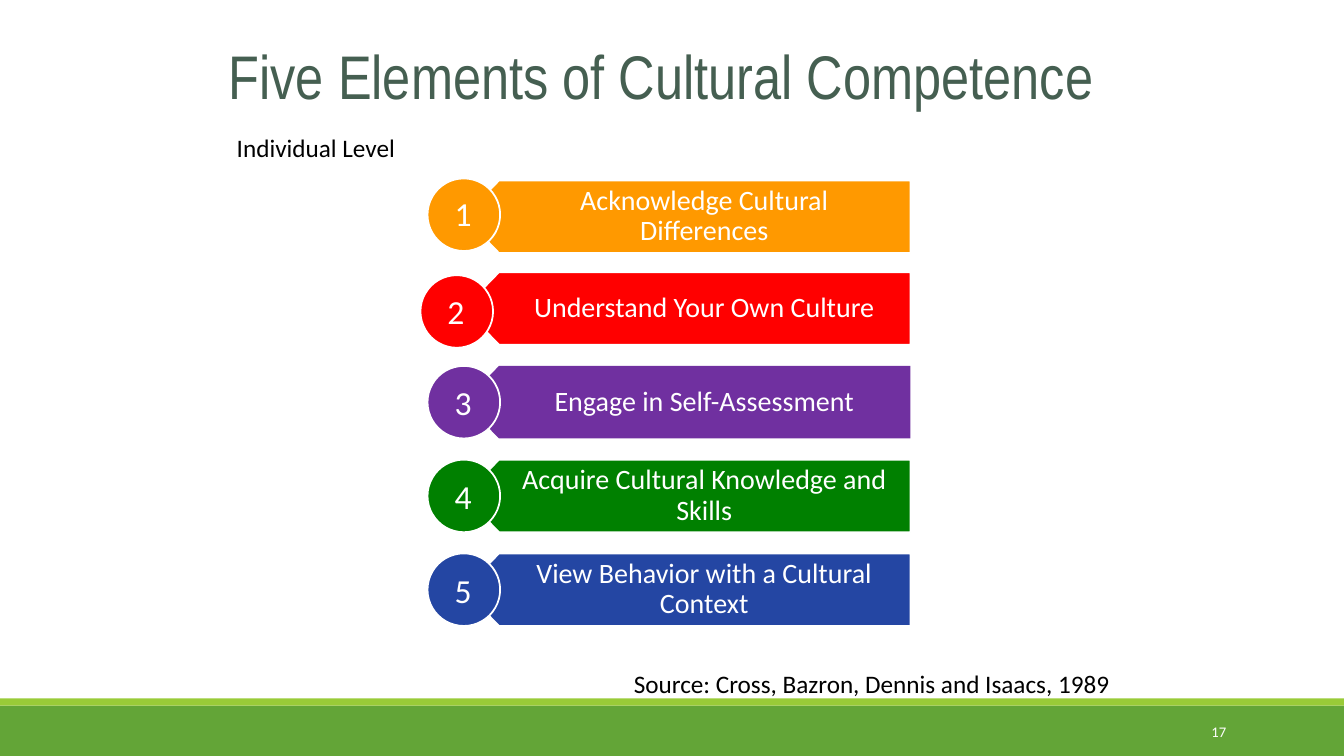
import pptx
import pptx.util
import pptx.dml.color
import pptx.enum.shapes
import pptx.enum.text

Inches = pptx.util.Inches
Pt = pptx.util.Pt
ALIGN = pptx.enum.text.PP_ALIGN
ANCHOR = pptx.enum.text.MSO_ANCHOR
KIND = pptx.enum.shapes.MSO_SHAPE

WHITE, BLACK = "FFFFFF", "000000"
TOP, PITCH, SIZE = 1.77, 0.93, 0.72
TIP, NECK, END = 4.6, 4.95, 9.03

# label, colour, bar drop, disc shift, disc drop, number drop, outlined
STEPS = [
    ("Acknowledge Cultural Differences", "FF9900", 0.02, 0, 0, 0.09, True),
    ("Understand Your Own Culture", "FF0000", 0, -0.07, 0.03, 0.11, True),
    ("Engage in Self-Assessment", "7030A0", 0, 0, 0, 0.11, False),
    ("Acquire Cultural Knowledge and Skills", "008000", 0, 0, 0, 0.11, True),
    ("View Behavior with a Cultural Context", "2446A3", 0, 0, 0, 0.11, True),
]


def color(code):
    """Turn a hex string into a colour."""
    return pptx.dml.color.RGBColor.from_string(code)


def paint(shape, fill, line=None):
    """Give a shape a flat fill and an optional outline."""
    shape.shadow.inherit = False
    shape.fill.solid()
    shape.fill.fore_color.rgb = color(fill)
    if line:
        shape.line.color.rgb = color(line)
        shape.line.width = Pt(1.25)
    else:
        shape.line.fill.background()


def write(shape, text, size, code, align=ALIGN.LEFT, anchor=ANCHOR.TOP,
          font="Calibri"):
    """Put one formatted paragraph into a shape."""
    frame = shape.text_frame
    frame.word_wrap = True
    frame.vertical_anchor = anchor
    frame.text = text
    para = frame.paragraphs[0]
    para.alignment = align
    face = para.runs[0].font
    face.name = font
    face.size = Pt(size)
    face.color.rgb = color(code)
    return para


def label(shapes, place, *style, **more):
    """Add a text box at left, top, width, height."""
    box = shapes.add_textbox(*map(Inches, place))
    write(box, *style, **more)


def band(shapes, top, height, fill):
    """Add a footer band as wide as the slide."""
    place = map(Inches, (0, top, 13.33, height))
    paint(shapes.add_shape(KIND.RECTANGLE, *place), fill)


def bar(shapes, top, text, fill, line):
    """Add a bar that points left, with its text."""
    base, mid = top + SIZE, top + SIZE / 2
    points = [(NECK, base), (TIP, mid), (NECK, top), (END, top)]
    pen = shapes.build_freeform(Inches(END), Inches(base))
    pen.add_line_segments([(Inches(x), Inches(y)) for x, y in points])
    shape = pen.convert_to_shape()
    paint(shape, fill, line)
    para = write(shape, text, 20, WHITE, ALIGN.CENTER, ANCHOR.MIDDLE)
    para.line_spacing = 0.9
    frame = shape.text_frame
    frame.margin_left, frame.margin_right = Inches(0.5), Inches(0.16)
    frame.margin_top = frame.margin_bottom = Inches(0.08)


def disc(shapes, left, top, fill):
    """Add a round badge."""
    place = map(Inches, (left, top, SIZE, SIZE))
    paint(shapes.add_shape(KIND.OVAL, *place), fill, WHITE)


def main():
    """Build and save the slide."""
    deck = pptx.Presentation()
    deck.slide_width, deck.slide_height = Inches(13.33), Inches(7.5)
    shapes = deck.slides.add_slide(deck.slide_layouts[6]).shapes

    band(shapes, 7, 0.5, "63A537")
    band(shapes, 6.93, 0.07, "99CB38")
    label(shapes, (10.83, 7.06, 1.43, 0.4), "17", 10.5, WHITE,
          ALIGN.RIGHT, ANCHOR.MIDDLE)
    label(shapes, (2.17, 0.3, 9, 0.88), "Five Elements of Cultural Competence",
          44, "455F51", anchor=ANCHOR.MIDDLE, font="Arial Narrow")

    group = shapes.add_group_shape().shapes
    for index, step in enumerate(STEPS):
        text, fill, drop, shift, sink, inset, edge = step
        top = TOP + PITCH * index
        left = TIP - SIZE / 2 + shift
        bar(group, top + drop, text, fill, WHITE if edge else None)
        disc(group, left, top + sink, fill)
        label(shapes, (left + 0.17, top + sink + inset, 0.37, 0.5),
              str(index + 1), 24, WHITE)

    label(shapes, (2.25, 6.58, 8.91, 0.4),
          "Source: Cross, Bazron, Dennis and Isaacs, 1989 ", 18, BLACK,
          ALIGN.RIGHT)
    label(shapes, (2.25, 1.26, 8.83, 0.4), "Individual Level", 18, BLACK)
    deck.save("out.pptx")


if __name__ == "__main__":
    main()
